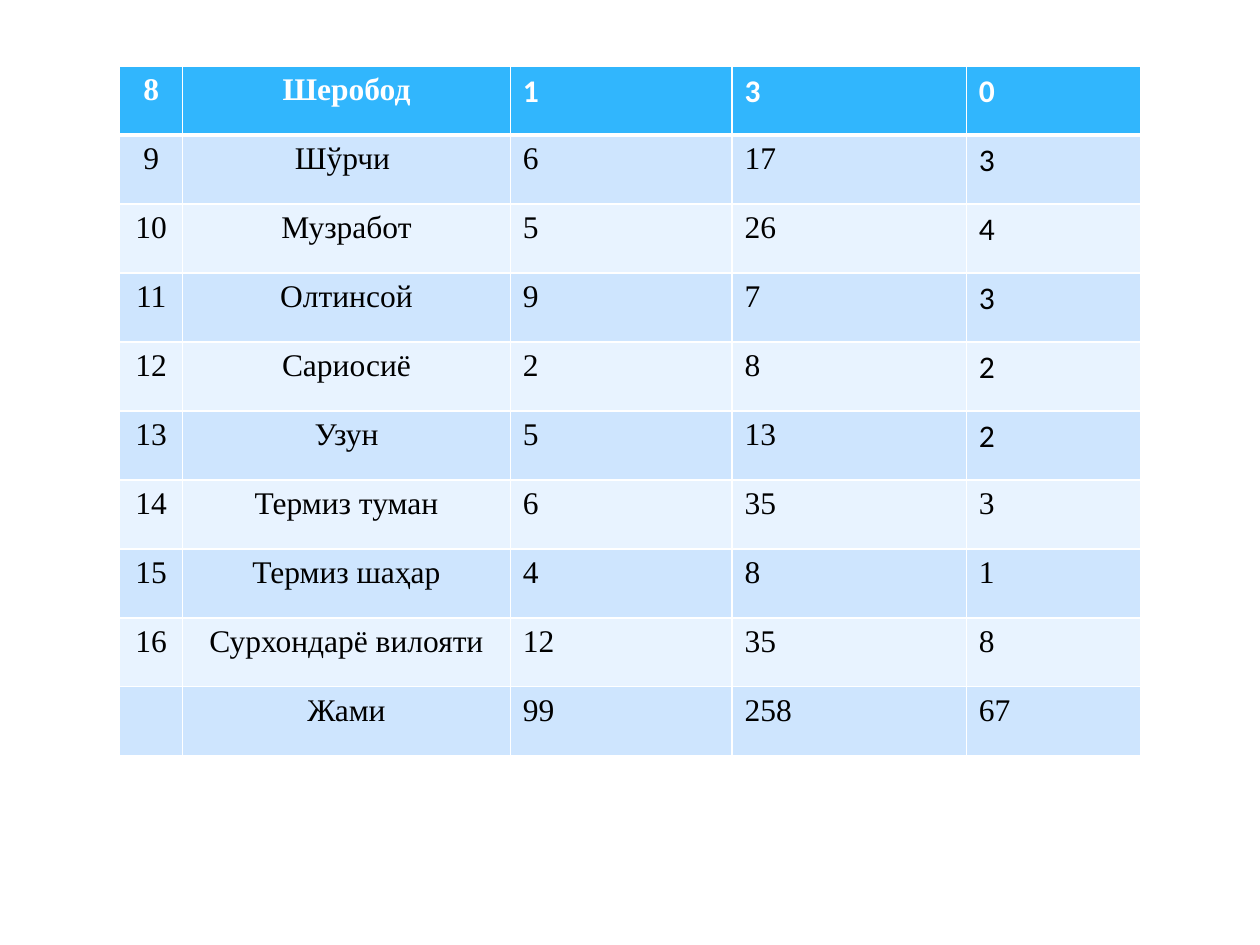
from dataclasses import dataclass

from pptx import Presentation
from pptx.dml.color import RGBColor
from pptx.enum.text import PP_ALIGN as Align
from pptx.oxml.ns import qn
from pptx.util import Inches, Pt
from lxml.etree import SubElement

WHITE = RGBColor(0xFF, 0xFF, 0xFF)
BLACK = RGBColor(0, 0, 0)
HEADER = RGBColor(0x31, 0xB6, 0xFD)
BANDS = RGBColor(0xCE, 0xE5, 0xFE), RGBColor(0xE8, 0xF3, 0xFF)
SERIF, SANS = "Times New Roman", "Calibri"

COLUMN_SHARES = 0.05, 0.26, 0.176, 0.186, 0.138
DISTRICTS = [
    ("8", "Шеробод", "1", "3", "0"),
    ("9", "Шўрчи ", "6", "17", "3"),
    ("10", "Музработ", "5", "26", "4"),
    ("11", "Олтинсой", "9", "7", "3"),
    ("12", "Сариосиё", "2", "8", "2"),
    ("13", "Узун", "5", "13", "2"),
    ("14", "Термиз туман", "6", "35", "3"),
    ("15", "Термиз шаҳар", "4", "8", "1"),
    ("16", "Сурхондарё вилояти", "12", "35", "8"),
    ("", "Жами", "99", "258", "67"),
]
SANS_CELLS = {(0, 2), (0, 3)} | {(row, 4) for row in range(6)}


@dataclass
class DistrictPage:
    """Draws on one page with lengths given as shares of the slide's size."""

    deck: object
    page: object
    size: int = 18

    def across(self, share):
        return int(self.deck.slide_width * share)

    def down(self, share):
        return int(self.deck.slide_height * share)

    def border(self, cell, side, width):
        line = SubElement(cell._tc.get_or_add_tcPr(), qn(f"a:ln{side}"), w=str(Pt(width)))
        SubElement(SubElement(line, qn("a:solidFill")), qn("a:srgbClr"), val=str(WHITE))

    def cell(self, cell, text, row, column):
        top, bottom = 3 if row == 1 else 1, 3 if row == 0 else 1
        for side, width in zip("LRTB", (1, 1, top, bottom)):
            self.border(cell, side, width)
        cell.fill.solid()
        cell.fill.fore_color.rgb = BANDS[(row - 1) % 2] if row else HEADER
        para = cell.text_frame.paragraphs[0]
        para.text = text
        para.alignment = Align.CENTER if column < 2 else Align.LEFT
        for span in para.runs:
            span.font.name = SANS if (row, column) in SANS_CELLS else SERIF
            span.font.size = Pt(self.size)
            span.font.bold = row == 0
            span.font.color.rgb = BLACK if row else WHITE

    def table(self, rows, shares, left, top, height):
        frame = self.page.shapes.add_table(
            len(rows), len(shares), self.across(left), self.down(top),
            self.across(sum(shares)), self.down(height))
        for column, share in zip(frame.table.columns, shares):
            column.width = self.across(share)
        for row, texts in enumerate(rows):
            for column, text in enumerate(texts):
                self.cell(frame.table.cell(row, column), text, row, column)


def main():
    deck = Presentation()
    deck.slide_width, deck.slide_height = Inches(10), Inches(7.5)
    page = deck.slides.add_slide(deck.slide_layouts[6])
    DistrictPage(deck, page).table(DISTRICTS, COLUMN_SHARES, left=0.095, top=0.07, height=0.73)
    deck.save("out.pptx")


if __name__ == "__main__":
    main()
